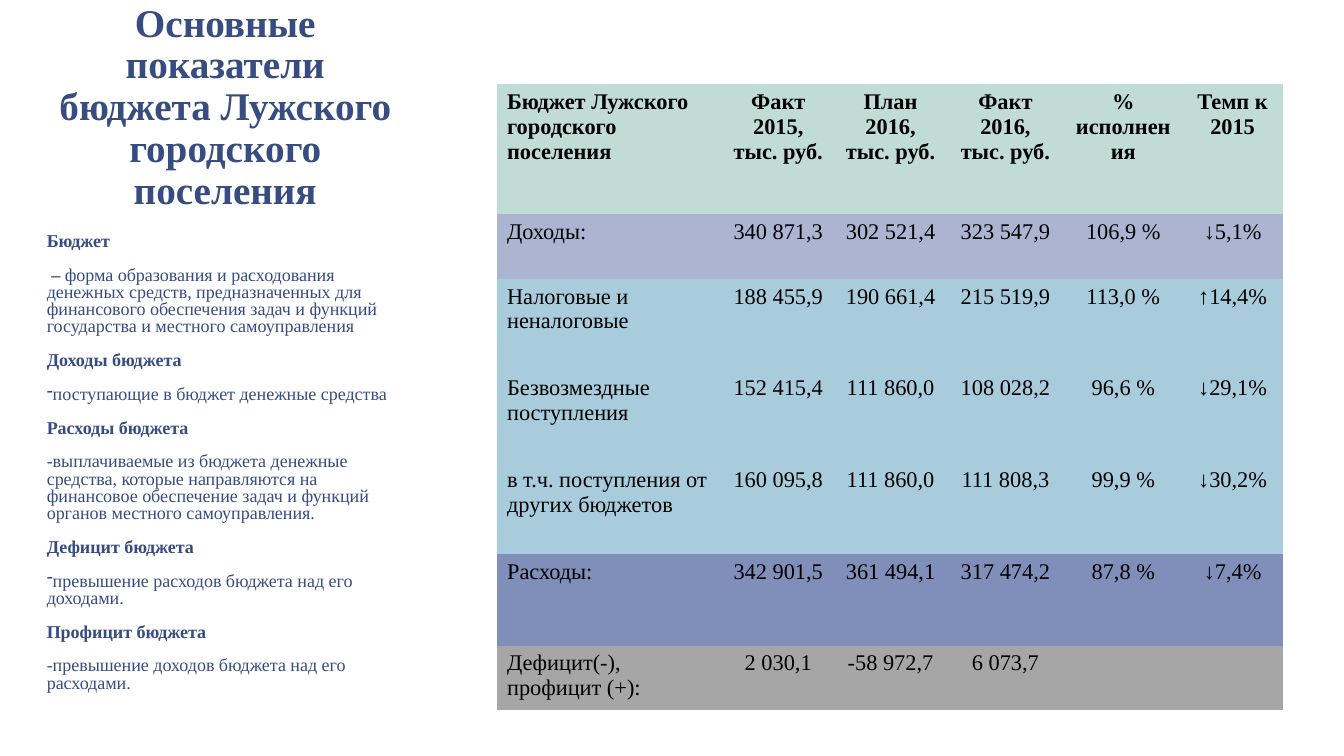
"""Builds the slide with the main budget figures of the Luga town settlement."""
from lxml.etree import SubElement
from pptx import Presentation
from pptx.dml.color import RGBColor
from pptx.enum.text import MSO_ANCHOR, MSO_AUTO_SIZE, PP_ALIGN
from pptx.oxml.ns import qn
from pptx.util import Pt

FONT = "Times New Roman"
NAVY, BLACK = "374C81", "000000"
MINT, LILAC, SKY, INDIGO, GREY = "C0DCD5", "ABB4D1", "A9CCDC", "808EBA", "A6A6A6"
NO_STYLE = "{2D5ABB26-0587-4C30-8999-92F81FD0307C}"

TITLE = "Основные показатели бюджета Лужского городского поселения"
DEFINITIONS = [
    ("Бюджет", "", [" – ", "форма образования и расходования денежных средств, предназначенных "
                    "для финансового обеспечения задач и функций государства и местного "
                    "самоуправления"]),
    ("Доходы бюджета", "-", ["поступающие в бюджет денежные средства"]),
    ("Расходы бюджета", "", ["-выплачиваемые из бюджета денежные средства, которые направляются "
                             "на финансовое обеспечение задач и функций органов местного "
                             "самоуправления."]),
    ("Дефицит бюджета", "-", ["превышение расходов бюджета над его доходами."]),
    ("Профицит бюджета", "", ["-превышение доходов бюджета над его расходами."]),
]
COLUMN_WIDTHS = [160.6, 80.6, 79.9, 84.2, 84.2, 72]
BUDGET_ROWS = [
    (92.9, MINT, ["Бюджет Лужского городского поселения", "Факт 2015, тыс. руб.",
                  "План 2016, тыс. руб.", "Факт 2016, тыс. руб.", "% исполнения", "Темп к 2015"]),
    (46.1, LILAC, ["Доходы:", "340 871,3", "302 521,4", "323 547,9", "106,9 %", "↓5,1%"]),
    (65.5, SKY, ["Налоговые и неналоговые", "188 455,9", "190 661,4", "215 519,9",
                 "113,0 %", "↑14,4%"]),
    (65.5, SKY, ["Безвозмездные поступления", "152 415,4", "111 860,0", "108 028,2",
                 "96,6 %", "↓29,1%"]),
    (65.5, SKY, ["в т.ч. поступления от других бюджетов", "160 095,8", "111 860,0", "111 808,3",
                 "99,9 %", "↓30,2%"]),
    (65.5, INDIGO, ["Расходы:", "342 901,5", "361 494,1", "317 474,2", "87,8 %", "↓7,4%"]),
    (46.1, GREY, ["Дефицит(-), профицит (+):", "2 030,1", "-58 972,7", "6 073,7", "", ""]),
]


def color(value):
    return RGBColor.from_string(value)


def add_run(paragraph, text, size, tint, bold):
    run = paragraph.add_run()
    run.text = text
    run.font.name, run.font.size, run.font.bold = FONT, Pt(size), bold
    run.font.color.rgb = color(tint)


def set_frame(frame, anchor):
    frame.word_wrap = True
    frame.auto_size = MSO_AUTO_SIZE.NONE
    frame.vertical_anchor = anchor
    frame.margin_left = frame.margin_right = Pt(9.6)
    frame.margin_top = frame.margin_bottom = Pt(4.8)


def add_title(slide):
    title = slide.shapes.title
    title.left, title.top, title.width, title.height = Pt(26.6), Pt(9.4), Pt(268.6), Pt(147.6)
    set_frame(title.text_frame, MSO_ANCHOR.BOTTOM)
    paragraph = title.text_frame.paragraphs[0]
    paragraph.alignment = PP_ALIGN.CENTER
    paragraph.line_spacing = 0.89
    paragraph.space_before = Pt(0)
    add_run(paragraph, TITLE, 28, NAVY, True)


def add_definitions(slide):
    frame = slide.shapes.add_textbox(Pt(23.8), Pt(162), Pt(274.3), Pt(339.8)).text_frame
    set_frame(frame, MSO_ANCHOR.TOP)
    lines = []
    for term, bullet, meaning in DEFINITIONS:
        lines += [([term], "", True), (meaning, bullet, False)]
    for index, (texts, bullet, bold) in enumerate(lines):
        paragraph = frame.add_paragraph() if index else frame.paragraphs[0]
        paragraph.line_spacing = 0.79
        paragraph.space_before = Pt(12 if index else 0)
        if bullet:
            properties = paragraph._p.get_or_add_pPr()
            properties.set("marL", "0")
            properties.set("indent", "0")
            SubElement(properties, qn("a:buChar")).set("char", bullet)
        for position, text in enumerate(texts):
            add_run(paragraph, text, 12.9, NAVY, bold or position < len(texts) - 1)


def add_budget_table(slide):
    heights = [height for height, _, _ in BUDGET_ROWS]
    table = slide.shapes.add_table(len(BUDGET_ROWS), len(COLUMN_WIDTHS), Pt(355), Pt(60.3),
                                   Pt(sum(COLUMN_WIDTHS)), Pt(sum(heights))).table
    table._tbl.tblPr.find(qn("a:tableStyleId")).text = NO_STYLE
    table.horz_banding = False
    for column, width in zip(table.columns, COLUMN_WIDTHS):
        column.width = Pt(width)
    for row_index, (height, fill, texts) in enumerate(BUDGET_ROWS):
        table.rows[row_index].height = Pt(height)
        for column_index, text in enumerate(texts):
            cell = table.cell(row_index, column_index)
            cell.fill.solid()
            cell.fill.fore_color.rgb = color(fill)
            if text:
                paragraph = cell.text_frame.paragraphs[0]
                paragraph.alignment = PP_ALIGN.CENTER if column_index else PP_ALIGN.LEFT
                add_run(paragraph, text, 16, BLACK, row_index == 0)


def main():
    deck = Presentation()
    deck.slide_width, deck.slide_height = Pt(960), Pt(540)
    slide = deck.slides.add_slide(deck.slide_layouts[5])
    add_title(slide)
    add_budget_table(slide)
    add_definitions(slide)
    deck.save("out.pptx")


if __name__ == "__main__":
    main()
